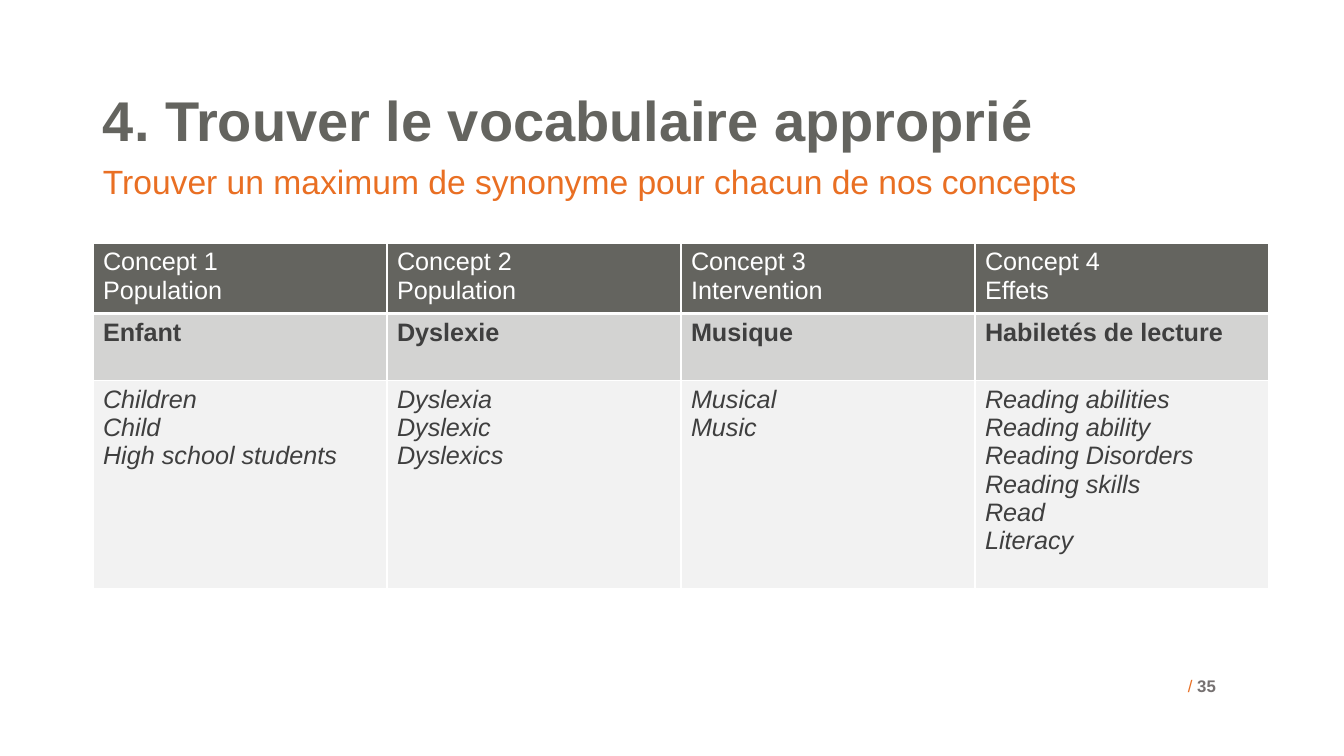
from lxml import etree
from pptx import Presentation
from pptx import util as u
from pptx.dml.color import RGBColor
from pptx.enum import text
from pptx.oxml.ns import qn

FONT = "Arial"
WHITE = RGBColor(0xFF, 0xFF, 0xFF)
SLATE = RGBColor(0x64, 0x64, 0x5F)
ORANGE = RGBColor(0xE9, 0x6F, 0x23)
GREY = RGBColor(0x76, 0x71, 0x71)
INK = RGBColor(0x3F, 0x3F, 0x3F)
SILVER = RGBColor(0xD3, 0xD3, 0xD2)
PALE = RGBColor(0xF2, 0xF2, 0xF2)

COLUMN_WIDTH = 294
ROW_HEIGHTS = (67, 67, 208)
CONCEPTS = (
    (("Concept 1", "Population"), ("Enfant",),
     ("Children", "Child", "High school students")),
    (("Concept 2", "Population"), ("Dyslexie",),
     ("Dyslexia", "Dyslexic", "Dyslexics")),
    (("Concept 3", "Intervention"), ("Musique",),
     ("Musical", "Music")),
    (("Concept 4", "Effets"), ("Habiletés de lecture",),
     ("Reading abilities", "Reading ability",
      "Reading Disorders Reading skills", "Read", "Literacy")),
)
ROW_STYLES = (
    (SLATE, WHITE, False, False),
    (SILVER, INK, True, False),
    (PALE, INK, False, True),
)


def px(count):
    """Turn pixels at 100.8 to the inch into EMU."""
    return u.Emu(round(count * 914400 / 100.8))


def style_font(font, size, color, bold=False, italic=False):
    """Set the typeface, size, colour and style of a font."""
    font.name = FONT
    font.size = u.Pt(size)
    font.color.rgb = color
    font.bold = bold
    font.italic = italic


def add_text(page, left, top, width, height, spans, anchor, spacing=1.0):
    """Add a one-paragraph text box of (words, size, colour, bold) spans."""
    box = page.shapes.add_textbox(px(left), px(top), px(width), px(height))
    frame = box.text_frame
    frame.word_wrap = True
    frame.vertical_anchor = anchor
    para = frame.paragraphs[0]
    para.line_spacing = spacing
    for words, size, color, bold in spans:
        span = para.add_run()
        span.text = words
        style_font(span.font if len(spans) > 1 else para.font, size, color, bold)


def add_borders(cell, bottom):
    """Draw white borders round a cell, with its own bottom width."""
    properties = cell._tc.get_or_add_tcPr()
    widths = {"a:lnL": 1, "a:lnR": 1, "a:lnT": 1, "a:lnB": bottom}
    for position, (tag, width) in enumerate(widths.items()):
        line = etree.Element(qn(tag), w=str(u.Pt(width)))
        fill = etree.SubElement(line, qn("a:solidFill"))
        etree.SubElement(fill, qn("a:srgbClr"), val=str(WHITE))
        properties.insert(position, line)


def fill_cell(cell, lines, style, bottom):
    """Write one paragraph per line in a coloured, bordered cell."""
    background, color, bold, italic = style
    cell.fill.solid()
    cell.fill.fore_color.rgb = background
    cell.text = "\n".join(lines)
    for para in cell.text_frame.paragraphs:
        style_font(para.font, 18, color, bold, italic)
    add_borders(cell, bottom)


def add_concepts(page, left, top):
    """Add the table with one column per concept."""
    table = page.shapes.add_table(
        len(ROW_HEIGHTS), len(CONCEPTS), px(left), px(top),
        px(COLUMN_WIDTH * len(CONCEPTS)), px(sum(ROW_HEIGHTS))).table
    for row, height in zip(table.rows, ROW_HEIGHTS):
        row.height = px(height)
    for column_index, concept in enumerate(CONCEPTS):
        table.columns[column_index].width = px(COLUMN_WIDTH)
        for row_index, lines in enumerate(concept):
            fill_cell(table.cell(row_index, column_index), lines,
                      ROW_STYLES[row_index], 3 if row_index == 0 else 1)


def main():
    """Build the slide and save it."""
    deck = Presentation()
    deck.slide_width, deck.slide_height = px(1344), px(756)
    page = deck.slides.add_slide(deck.slide_layouts[6])
    middle = text.MSO_ANCHOR.MIDDLE
    add_text(page, 93, 88, 1159, 70,
             [("4. Trouver le vocabulaire approprié", 40, SLATE, True)],
             middle, 0.9)
    add_text(page, 93, 160, 1159, 50,
             [("Trouver un maximum de synonyme pour chacun de nos concepts",
               24, ORANGE, False)], middle, 0.8)
    add_text(page, 1178, 671, 73, 40,
             [("/ ", 12, ORANGE, False), ("35", 12, GREY, True)],
             text.MSO_ANCHOR.TOP)
    add_concepts(page, 93, 243)
    deck.save("out.pptx")


if __name__ == "__main__":
    main()
